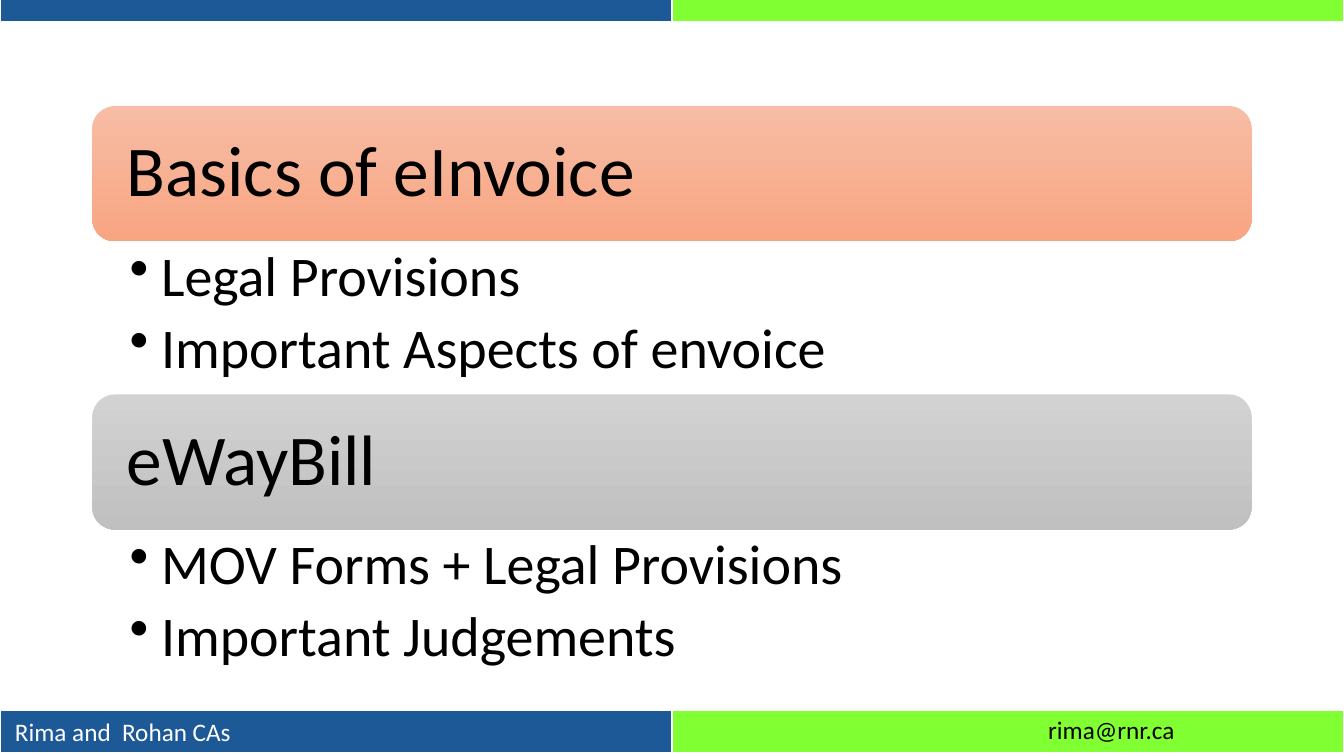
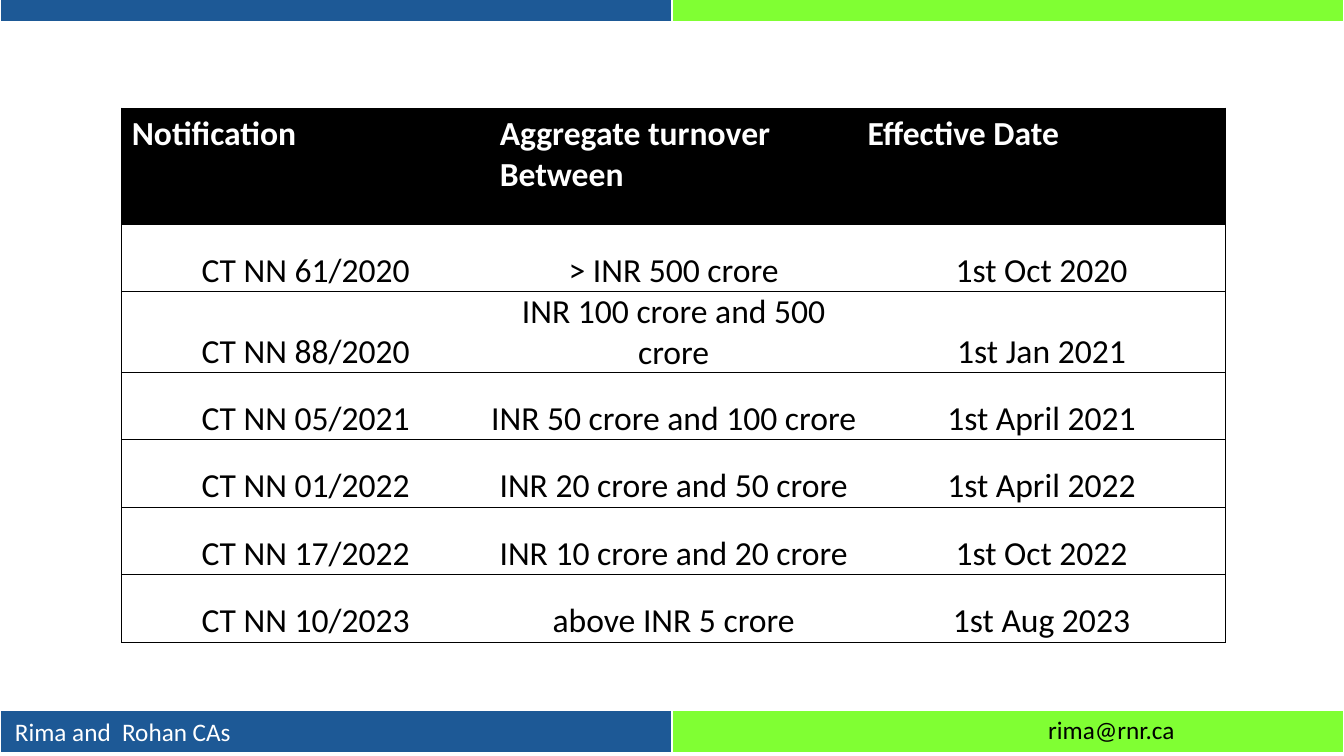
from pptx import Presentation
from pptx.dml.color import RGBColor
from pptx.enum import shapes, text
from pptx.oxml import parse_xml
from pptx.oxml.ns import nsdecls
from pptx.util import Pt

WIDTH, HEIGHT = 960, 540
FONT = "Calibri"
BLUE, GREEN, WHITE, BLACK = "1D5996", "80FF33", "FFFFFF", "000000"

BAND_TOPS = (-15, 507.6)
BAND_HEIGHT = 31
FOOTERS = [
    ("Rima and  Rohan CAs", 3.6, 508.4, 180, WHITE),
    ("rima@rnr.ca", 741.6, 506.4, 120, BLACK),
]

TOPICS = [
    ("Basics of eInvoice", ("F7BDA5", "F8A582"),
     ["Legal Provisions", "Important Aspects of envoice"]),
    ("eWayBill", ("D2D2D2", "C0C0C0"),
     ["MOV Forms + Legal Provisions", "Important Judgements"]),
]
TOPIC_LEFT, TOPIC_TOP, TOPIC_WIDTH = 66, 75.8, 828
HEADING_HEIGHT, BULLETS_HEIGHT = 96.5, 108

HEADER = ["Notification", "Aggregate turnover Between", "Effective Date"]
NOTIFICATIONS = [
    ("CT NN 61/2020", "> INR 500 crore", "1st Oct 2020"),
    ("CT NN 88/2020", "INR 100 crore and 500 crore", "1st Jan 2021"),
    ("CT NN 05/2021", "INR 50 crore and 100 crore", "1st April 2021"),
    ("CT NN 01/2022", "INR 20 crore and 50 crore", "1st April 2022"),
    ("CT NN 17/2022", "INR 10 crore and 20 crore", "1st Oct 2022"),
    ("CT NN 10/2023", "above INR 5 crore", "1st Aug 2023"),
]


def rgb(color):
    return RGBColor.from_string(color)


def write(frame, lines, size=18, color=BLACK, bold=False, align=text.PP_ALIGN.LEFT,
          anchor=text.MSO_ANCHOR.TOP, insets=(7.2, 3.6, 7.2, 3.6),
          line_spacing=1.0, space_after=0, bullet_indent=0):
    """Fill a text frame, one paragraph a line; insets are left, top, right, bottom."""
    frame.word_wrap = True
    frame.vertical_anchor = anchor
    (frame.margin_left, frame.margin_top,
     frame.margin_right, frame.margin_bottom) = map(Pt, insets)
    for index, line in enumerate(lines):
        paragraph = frame.add_paragraph() if index else frame.paragraphs[0]
        paragraph.alignment = align
        paragraph.line_spacing = line_spacing
        paragraph.space_after = Pt(space_after)
        run = paragraph.add_run()
        run.text = line
        run.font.name, run.font.size, run.font.bold = FONT, Pt(size), bold
        run.font.color.rgb = rgb(color)
        if bullet_indent:
            properties = paragraph._p.get_or_add_pPr()
            properties.set("marL", str(Pt(bullet_indent)))
            properties.set("indent", str(-Pt(bullet_indent)))
            properties.append(parse_xml(f'<a:buChar {nsdecls("a")} char="•"/>'))


def set_borders(cell, **sides):
    """Draw the sides given as L, R, T or B=(color, width); clear the others."""
    properties = cell._tc.get_or_add_tcPr()
    for index, side in enumerate("LRTB"):
        color, width = sides.get(side, (None, 0))
        fill = (f'<a:solidFill><a:srgbClr val="{color}"/></a:solidFill>'
                if color else "<a:noFill/>")
        properties.insert(index, parse_xml(
            f'<a:ln{side} {nsdecls("a")} w="{Pt(width)}">{fill}</a:ln{side}>'))


def add_plain_table(slide, left, top, width, row_heights, column_count):
    frame = slide.shapes.add_table(len(row_heights), column_count, Pt(left), Pt(top),
                                   Pt(width), Pt(sum(row_heights)))
    table = frame.table
    table.first_row = table.horz_banding = False
    for row, height in zip(table.rows, row_heights):
        row.height = Pt(height)
    return table


def add_base_slide(presentation):
    """Add a blank slide with the coloured bands and the footers."""
    slide = presentation.slides.add_slide(presentation.slide_layouts[6])
    edge = (WHITE, 1)
    for top in BAND_TOPS:
        band = add_plain_table(slide, 0, top, WIDTH, [BAND_HEIGHT], 2)
        for cell, color in zip(band.iter_cells(), (BLUE, GREEN)):
            cell.fill.solid()
            cell.fill.fore_color.rgb = rgb(color)
            set_borders(cell, L=edge, R=edge, T=edge, B=(WHITE, 3))
    for line, left, top, width, color in FOOTERS:
        box = slide.shapes.add_textbox(Pt(left), Pt(top), Pt(width), Pt(29))
        write(box.text_frame, [line], color=color)
    return slide


def add_topics(slide):
    for index, (heading, gradient, bullets) in enumerate(TOPICS):
        top = TOPIC_TOP + index * (HEADING_HEIGHT + BULLETS_HEIGHT + 1.5)
        bar = slide.shapes.add_shape(
            shapes.MSO_SHAPE.ROUNDED_RECTANGLE, Pt(TOPIC_LEFT), Pt(top),
            Pt(TOPIC_WIDTH), Pt(HEADING_HEIGHT))
        bar.shadow.inherit = False
        bar.line.fill.background()
        bar.fill.gradient()
        bar.fill.gradient_angle = 270
        for stop, color in zip(bar.fill.gradient_stops, gradient):
            stop.color.rgb = rgb(color)
        write(bar.text_frame, [heading], size=51, anchor=text.MSO_ANCHOR.MIDDLE,
              insets=(19.8, 15, 19.8, 15), line_spacing=0.9)
        box = slide.shapes.add_textbox(Pt(TOPIC_LEFT), Pt(top + HEADING_HEIGHT),
                                       Pt(TOPIC_WIDTH), Pt(BULLETS_HEIGHT))
        write(box.text_frame, bullets, size=40, insets=(26.6, 5, 28.8, 5),
              line_spacing=0.9, space_after=8, bullet_indent=22.5)


def add_notifications(slide):
    rows = [HEADER, *NOTIFICATIONS]
    heights = [82.8] + [48.2] * len(NOTIFICATIONS)
    table = add_plain_table(slide, 87, 77.2, 788.4, heights, len(HEADER))
    edge = (BLACK, 0.5)
    for row_index, row in enumerate(rows):
        for column_index, value in enumerate(row):
            cell = table.cell(row_index, column_index)
            sides = {"T": edge, "B": edge}
            if column_index == 0:
                sides["L"] = edge
            if column_index == len(row) - 1:
                sides["R"] = edge
            if row_index == 0:
                cell.fill.solid()
                cell.fill.fore_color.rgb = rgb(BLACK)
                style = dict(color=WHITE, bold=True)
            else:
                cell.fill.background()
                style = dict(align=text.PP_ALIGN.CENTER, insets=(0, 0, 0, 0))
                cell.vertical_anchor = text.MSO_ANCHOR.BOTTOM
            set_borders(cell, **sides)
            write_cell(cell, value, **style)


def write_cell(cell, value, insets=(7.2, 3.6, 7.2, 3.6), **style):
    """Write a table cell, whose margins and anchor belong to the cell itself."""
    anchor = cell.vertical_anchor
    write(cell.text_frame, [value], size=24, **style)
    (cell.margin_left, cell.margin_top,
     cell.margin_right, cell.margin_bottom) = map(Pt, insets)
    cell.vertical_anchor = anchor


def main():
    presentation = Presentation()
    presentation.slide_width, presentation.slide_height = Pt(WIDTH), Pt(HEIGHT)
    add_topics(add_base_slide(presentation))
    add_notifications(add_base_slide(presentation))
    presentation.save("out.pptx")


if __name__ == "__main__":
    main()
